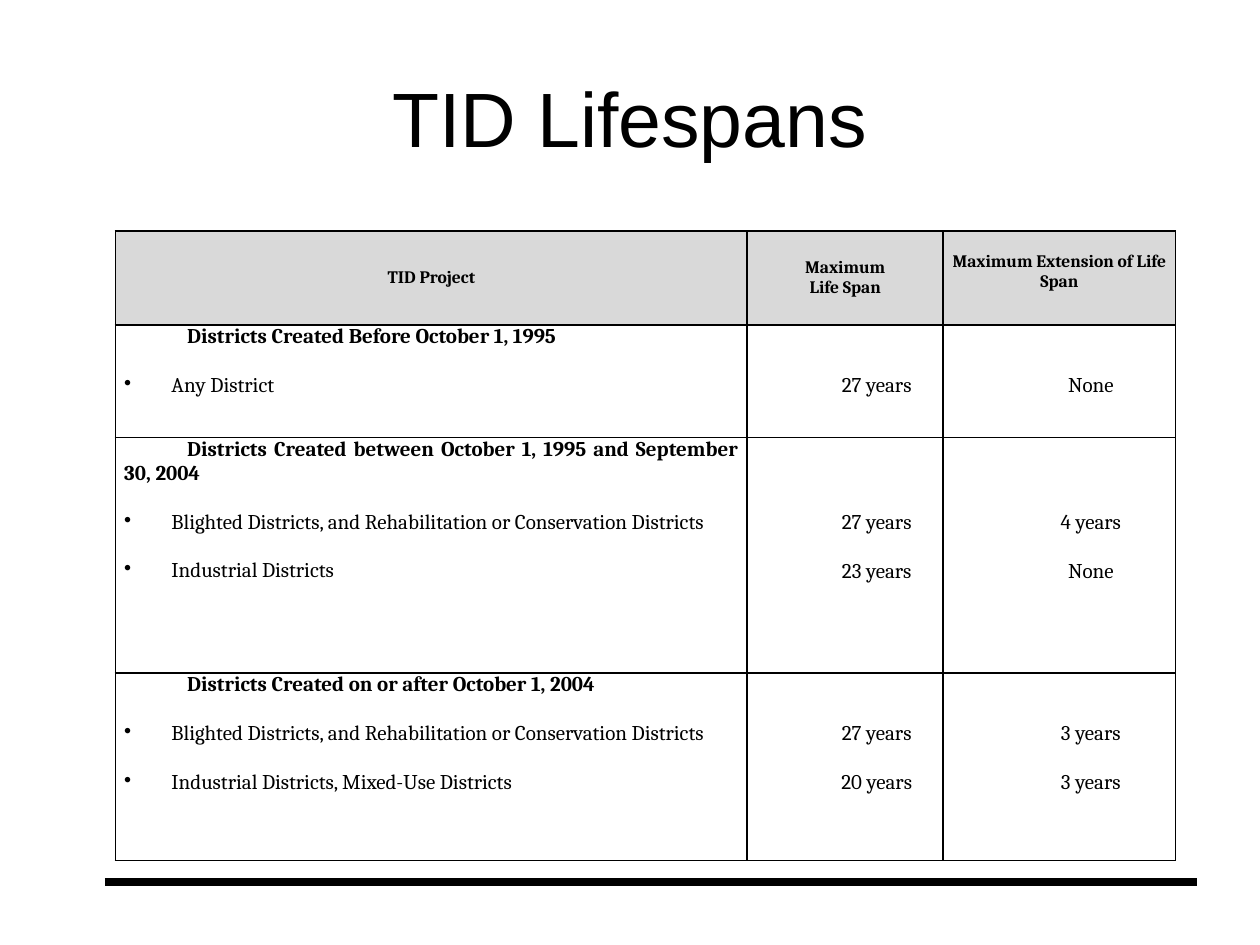
"""Build the TID Lifespans slide with its table of district life spans."""
from lxml import etree
from pptx import Presentation
from pptx.dml.color import RGBColor
from pptx.enum import shapes, text
from pptx.oxml import ns
from pptx.util import Pt

HUES = {"ink": "000000", "head": "D9D9D9"}
TITLE = "TID Lifespans"
HEADS = [
    (["TID Project"], "mid", 0),
    (["Maximum", "Life Span"], "mid", 0),
    (["Maximum Extension of Life Span"], "top", 11.7),
]
BLIGHT = "Blighted Districts, and Rehabilitation or Conservation Districts"
GROUPS = [
    ("Districts Created Before October 1, 1995", 1,
     [("Any District", "27 years", "None")]),
    ("Districts Created between October 1, 1995 and September 30, 2004", 2,
     [(BLIGHT, "27 years", "4 years"),
      ("Industrial Districts", "23 years", "None")]),
    ("Districts Created on or after October 1, 2004", 1,
     [(BLIGHT, "27 years", "3 years"),
      ("Industrial Districts, Mixed-Use Districts", "20 years", "3 years")]),
]
COLS = [361, 112, 132.7]
ROWS = [53.7, 64.2, 134.7, 107.3]
LEFT, TOP, LINE = 66, 132, 14
ALIGN = {"mid": text.PP_ALIGN.CENTER, "just": text.PP_ALIGN.JUSTIFY,
         "left": text.PP_ALIGN.LEFT}
ANCHOR = {"mid": text.MSO_ANCHOR.MIDDLE, "top": text.MSO_ANCHOR.TOP}


def tint(name):
    return RGBColor.from_string(HUES[name])


def write(frame, words, first=True, font="Cambria", size=12, bold=False,
          align="mid", gap=0, indent=0, bullet=False):
    para = frame.paragraphs[0] if first else frame.add_paragraph()
    para.alignment = ALIGN[align]
    para.space_before = Pt(0 if first else gap)
    props = para._p.get_or_add_pPr()
    props.set("marL", str(Pt(27) if bullet else 0))
    props.set("indent", str(Pt(-27 if bullet else indent)))
    if bullet:
        etree.SubElement(props, ns.qn("a:buChar")).set("char", "•")
    else:
        etree.SubElement(props, ns.qn("a:buNone"))
    run = para.add_run()
    run.text = words
    run.font.name, run.font.size, run.font.bold = font, Pt(size), bold
    run.font.color.rgb = tint("ink")


def frame_cell(cell, fill=None, top=0, anchor="top"):
    cell.margin_left = cell.margin_right = Pt(5)
    cell.margin_top, cell.margin_bottom = Pt(top), 0
    cell.vertical_anchor = ANCHOR[anchor]
    props = cell._tc.get_or_add_tcPr()
    for side in "LRTB":
        edge = etree.SubElement(props, ns.qn("a:ln" + side), w=str(Pt(1)))
        solid = etree.SubElement(edge, ns.qn("a:solidFill"))
        etree.SubElement(solid, ns.qn("a:srgbClr"), val=HUES["ink"])
    if fill:
        cell.fill.solid()
        cell.fill.fore_color.rgb = tint(fill)
    else:
        cell.fill.background()
    return cell.text_frame


def main():
    deck = Presentation()
    deck.slide_width, deck.slide_height = Pt(720), Pt(540)
    slide = deck.slides.add_slide(deck.slide_layouts[5])

    rule = slide.shapes.add_connector(
        shapes.MSO_CONNECTOR.STRAIGHT, Pt(60), Pt(504), Pt(684), Pt(504))
    rule.line.color.rgb, rule.line.width = tint("ink"), Pt(4.5)
    etree.SubElement(rule._element.spPr, ns.qn("a:effectLst"))

    title = slide.shapes.title
    title.left, title.top, title.width, title.height = map(Pt, (36, 21.6, 648, 90))
    title.text_frame.vertical_anchor = ANCHOR["mid"]
    write(title.text_frame, TITLE, font="Arial", size=44)

    table = slide.shapes.add_table(
        len(ROWS), len(COLS), Pt(LEFT), Pt(TOP), Pt(sum(COLS)), Pt(sum(ROWS))).table
    table.first_row = table.horz_banding = False
    for col, width in zip(table.columns, COLS):
        col.width = Pt(width)
    for row, height in zip(table.rows, ROWS):
        row.height = Pt(height)

    for col, (lines, anchor, top) in enumerate(HEADS):
        box = frame_cell(table.cell(0, col), "head", top, anchor)
        for i, words in enumerate(lines):
            write(box, words, i == 0, size=10, bold=True)

    for row, (name, deep, items) in enumerate(GROUPS, 1):
        box = frame_cell(table.cell(row, 0))
        write(box, name, bold=True, align="just", indent=36)
        for item in items:
            write(box, item[0], False, align="left", gap=LINE, bullet=True)
        for col in (1, 2):
            box = frame_cell(table.cell(row, col), top=LINE * (deep + 1))
            for i, item in enumerate(items):
                write(box, item[col], i == 0, gap=LINE, indent=36)

    deck.save("out.pptx")


if __name__ == "__main__":
    main()
